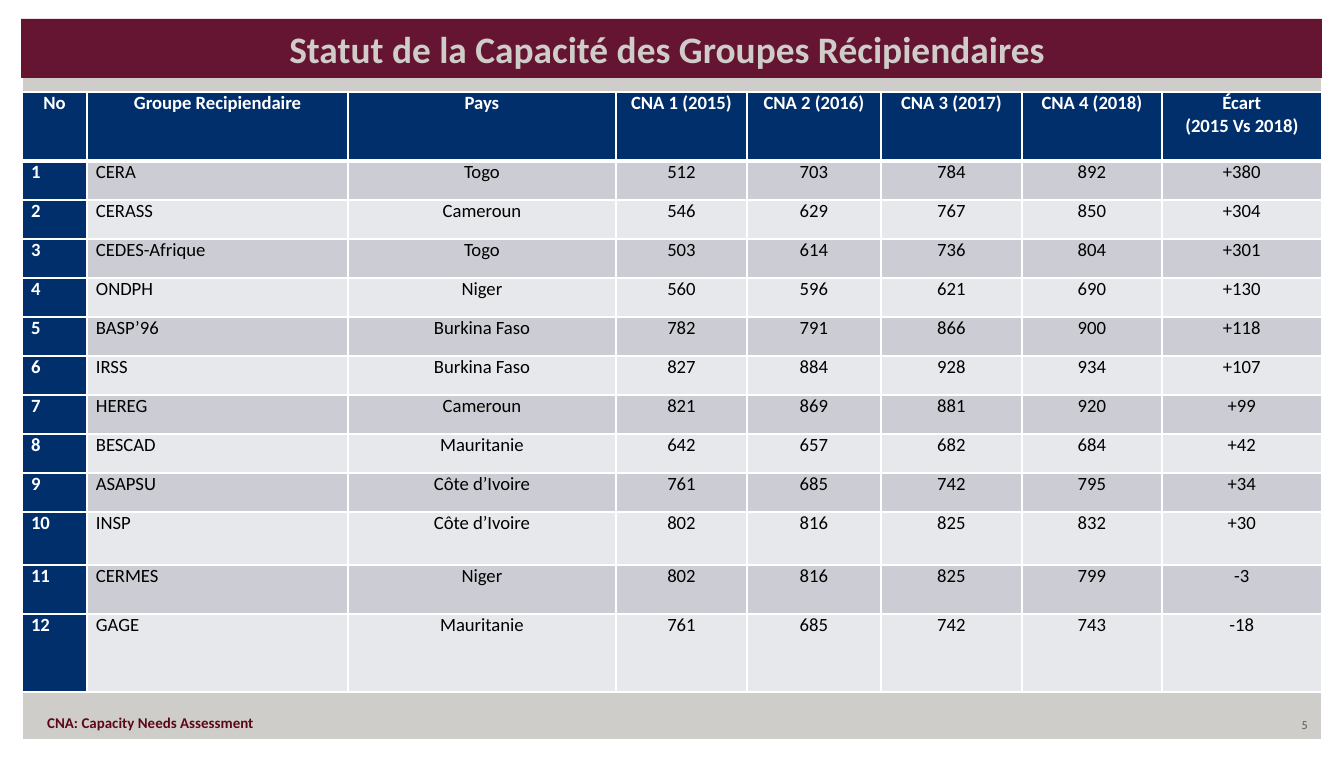
import dataclasses

import lxml.etree
import pptx
import pptx.dml.color
import pptx.enum.shapes
import pptx.enum.text
import pptx.oxml.ns
import pptx.util

ALIGN = pptx.enum.text.PP_ALIGN
ANCHOR = pptx.enum.text.MSO_ANCHOR
SHAPE = pptx.enum.shapes.MSO_SHAPE


@dataclasses.dataclass(frozen=True)
class Theme:
    font: str = "Calibri"
    alt: str = "Cabin"
    page: str = "CFCDC9"
    white: str = "FFFFFF"
    black: str = "000000"
    wine: str = "651532"
    note: str = "5D0618"
    grey: str = "6C6463"
    navy: str = "002F6C"
    bands: tuple = ("CCCDD4", "E7E8EB")
    title: int = 20
    body: int = 10
    small: int = 8
    tiny: int = 6
    thin: int = 1
    thick: int = 3


THEME = Theme()
SCALE = 914400 / 134.4
WIDE, HIGH = 1344, 762
COLS = (65, 261, 268, 131, 134, 141, 140, 160)
ROWS = (69,) + (39,) * 9 + (53, 49, 78)
HEADS = ("No", "Groupe Recipiendaire", "Pays", "CNA 1 (2015)", "CNA 2 (2016)",
         "CNA 3 (2017)", "CNA 4 (2018)", "Écart\n(2015 Vs 2018)")
GROUPS = (
    ("CERA", "Togo", 512, 703, 784, 892),
    ("CERASS", "Cameroun", 546, 629, 767, 850),
    ("CEDES-Afrique", "Togo", 503, 614, 736, 804),
    ("ONDPH", "Niger", 560, 596, 621, 690),
    ("BASP’96", "Burkina Faso", 782, 791, 866, 900),
    ("IRSS", "Burkina Faso", 827, 884, 928, 934),
    ("HEREG", "Cameroun", 821, 869, 881, 920),
    ("BESCAD", "Mauritanie", 642, 657, 682, 684),
    ("ASAPSU", "Côte d’Ivoire", 761, 685, 742, 795),
    ("INSP", "Côte d’Ivoire", 802, 816, 825, 832),
    ("CERMES", "Niger", 802, 816, 825, 799),
    ("GAGE", "Mauritanie", 761, 685, 742, 743),
)


def px(size):
    return pptx.util.Emu(round(size * SCALE))


def paint(fill, color):
    fill.solid()
    fill.fore_color.rgb = pptx.dml.color.RGBColor.from_string(color)


def write(frame, text, size, color, bold=False, align=ALIGN.LEFT, font=THEME.font):
    frame.text = text
    for para in frame.paragraphs:
        para.alignment = align
        para.font.name = font
        para.font.size = pptx.util.Pt(size)
        para.font.bold = bold
        para.font.color.rgb = pptx.dml.color.RGBColor.from_string(color)


def draw_frame(slide, box):
    paint(slide.background.fill, THEME.page)
    shape = slide.shapes.add_shape(SHAPE.FRAME, *map(px, box))
    shape.adjustments[0] = 0.03
    shape.shadow.inherit = False
    paint(shape.fill, THEME.white)
    shape.line.fill.background()
    slide.shapes._spTree.insert(2, shape._element)


def draw_title(slide, box):
    title = slide.shapes.title
    title.left, title.top, title.width, title.height = map(px, box)
    paint(title.fill, THEME.wine)
    frame = title.text_frame
    frame.auto_size = pptx.enum.text.MSO_AUTO_SIZE.NONE
    frame.vertical_anchor = ANCHOR.BOTTOM
    write(frame, "Statut de la Capacité des Groupes Récipiendaires ",
          THEME.title, THEME.page, True, ALIGN.CENTER)


def edge(cell, side, width):
    props = cell._tc.get_or_add_tcPr()
    tag = pptx.oxml.ns.qn
    line = lxml.etree.SubElement(props, tag(f"a:ln{side}"), w=str(pptx.util.Pt(width)))
    fill = lxml.etree.SubElement(line, tag("a:solidFill"))
    lxml.etree.SubElement(fill, tag("a:srgbClr"), val=THEME.white)


def draw_cell(cell, row, col, text):
    head = row == 0
    dark = head or col == 0
    rules = {"L": THEME.thin, "R": THEME.thin,
             "T": THEME.thick if row == 1 else THEME.thin,
             "B": THEME.thick if head else THEME.thin}
    for side, width in rules.items():
        edge(cell, side, width)
    paint(cell.fill, THEME.navy if dark else THEME.bands[(row - 1) % 2])
    cell.margin_left = cell.margin_right = px(9)
    cell.margin_top = cell.margin_bottom = 0
    align = ALIGN.CENTER if head or col > 1 else ALIGN.JUSTIFY
    write(cell.text_frame, text, THEME.body,
          THEME.white if dark else THEME.black, dark, align)


def draw_table(slide, left, top):
    box = (left, top, sum(COLS), sum(ROWS))
    table = slide.shapes.add_table(len(ROWS), len(COLS), *map(px, box)).table
    table.horz_banding = False
    for col, width in zip(table.columns, COLS):
        col.width = px(width)
    for row, height in zip(table.rows, ROWS):
        row.height = px(height)
    lines = [HEADS]
    for rank, group in enumerate(GROUPS, 1):
        lines.append((rank, *group, f"{group[-1] - group[2]:+d}"))
    for row, line in enumerate(lines):
        for col, text in enumerate(line):
            draw_cell(table.cell(row, col), row, col, str(text))


def draw_foot(slide, box):
    left, top, width, height = box
    note = slide.shapes.add_textbox(*map(px, (left, top, 692, 32))).text_frame
    note.word_wrap = True
    write(note, "CNA: Capacity Needs Assessment", THEME.small, THEME.note, True)
    area = (left + width - 313, top + height - 27, 313, 27)
    page = slide.shapes.add_textbox(*map(px, area)).text_frame
    page.word_wrap = True
    page.vertical_anchor = ANCHOR.MIDDLE
    write(page, "5", THEME.tiny, THEME.grey, align=ALIGN.RIGHT, font=THEME.alt)


def main():
    deck = pptx.Presentation()
    deck.slide_width, deck.slide_height = px(WIDE), px(HIGH)
    slide = deck.slides.add_slide(deck.slide_layouts[5])
    draw_frame(slide, (0, 0, WIDE, HIGH))
    draw_title(slide, (21, 19, 1301, 59))
    draw_table(slide, 22, 92)
    draw_foot(slide, (34, 707, 1287, 32))
    deck.save("out.pptx")


if __name__ == "__main__":
    main()
